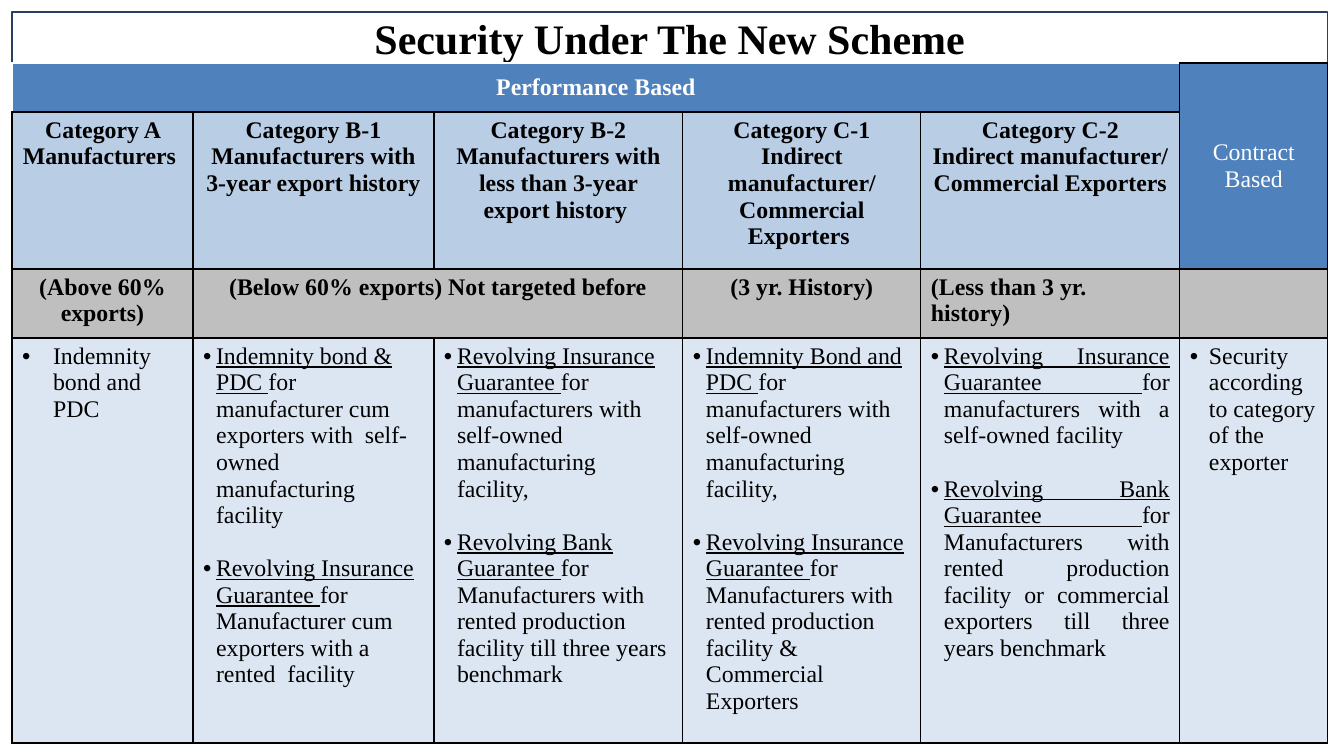
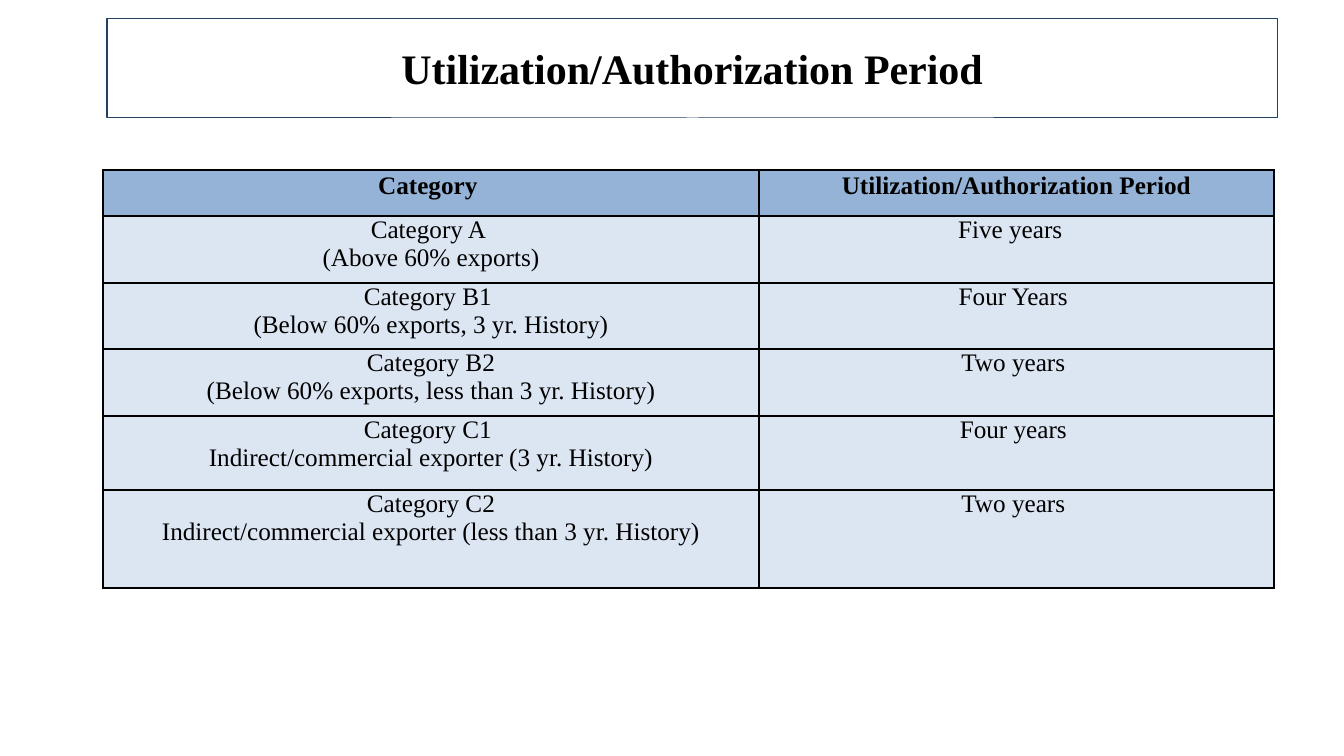
from dataclasses import dataclass
from typing import Optional

from lxml.etree import SubElement
from pptx import Presentation
from pptx.dml.color import RGBColor
from pptx.enum.text import MSO_ANCHOR, MSO_AUTO_SIZE, PP_ALIGN
from pptx.oxml.ns import qn
from pptx.util import Emu, Pt

FONT = "Times New Roman"
BLACK, WHITE, NAVY = "000000", "FFFFFF", "254061"
BLUE, MID_BLUE, SOFT_BLUE = "4F81BD", "95B3D7", "B9CDE5"
PALE_BLUE, GREY = "DCE6F2", "BFBFBF"
SIDES = ("L", "R", "T", "B")
CENTER, LEFT, JUSTIFY = PP_ALIGN.CENTER, PP_ALIGN.LEFT, PP_ALIGN.JUSTIFY


@dataclass(frozen=True)
class Box:
    x: int
    y: int
    w: int
    h: int


@dataclass(frozen=True)
class Band:
    row: int
    col: int
    text: str
    fill: str
    rows: int = 1
    cols: int = 1
    bold: bool = True
    color: str = BLACK
    align: PP_ALIGN = CENTER
    anchor: MSO_ANCHOR = MSO_ANCHOR.TOP


@dataclass(frozen=True)
class Security:
    items: tuple[tuple[str, str], ...]
    indent: int = 13
    align: PP_ALIGN = LEFT


@dataclass(frozen=True)
class Period:
    category: str
    years: str
    height: int


BANDS = (
    Band(0, 0, "Performance Based", BLUE, cols=5, color=WHITE, anchor=MSO_ANCHOR.MIDDLE),
    Band(0, 5, "Contract Based", BLUE, rows=2, bold=False, color=WHITE, anchor=MSO_ANCHOR.MIDDLE),
    Band(1, 0, "Category A Manufacturers ", SOFT_BLUE),
    Band(1, 1, "Category B-1 Manufacturers with 3-year export history", SOFT_BLUE),
    Band(1, 2, "Category B-2 Manufacturers with less than 3-year export history ", SOFT_BLUE),
    Band(1, 3, "Category C-1\nIndirect manufacturer/ Commercial Exporters ", SOFT_BLUE),
    Band(1, 4, "Category C-2\nIndirect manufacturer/ Commercial Exporters", SOFT_BLUE),
    Band(2, 0, "(Above 60% exports)", GREY),
    Band(2, 1, "(Below 60% exports) Not targeted before", GREY, cols=2),
    Band(2, 3, "(3 yr. History)", GREY),
    Band(2, 4, "(Less than 3 yr. history)", GREY, align=LEFT),
    Band(2, 5, "", GREY),
)

SECURITIES = (
    Security((("", "Indemnity bond and PDC"),), indent=31),
    Security((
        ("Indemnity bond & PDC ",
         "for manufacturer cum exporters with  self-owned manufacturing facility"),
        ("Revolving Insurance Guarantee ",
         "for Manufacturer cum exporters with a rented  facility"),
    )),
    Security((
        ("Revolving Insurance Guarantee ",
         "for manufacturers with self-owned manufacturing facility,"),
        ("Revolving Bank Guarantee ",
         "for Manufacturers with rented production facility till three years benchmark"),
    )),
    Security((
        ("Indemnity Bond and PDC ",
         "for manufacturers with self-owned manufacturing facility,"),
        ("Revolving Insurance Guarantee ",
         "for Manufacturers with rented production facility & Commercial Exporters"),
    )),
    Security((
        ("Revolving Insurance Guarantee ",
         "for manufacturers with a self-owned facility "),
        ("Revolving Bank Guarantee ",
         "for Manufacturers with rented production facility or commercial exporters "
         "till three years benchmark"),
    ), align=JUSTIFY),
    Security((("", "Security according to category of the exporter"),), indent=19),
)

PERIODS = (
    Period("Category ", "Utilization/Authorization Period", 46),
    Period("Category A \n(Above 60% exports)", "Five years  ", 67),
    Period("Category B1 \n(Below 60% exports, 3 yr. History)", "Four Years ", 66),
    Period("Category B2\n(Below 60% exports, less than 3 yr. History)", "Two years ", 67),
    Period("Category C1 \nIndirect/commercial exporter (3 yr. History)", "Four years ", 74),
    Period("Category C2\nIndirect/commercial exporter (less than 3 yr. History)", "Two years ", 98),
)


def px(n: int) -> Emu:
    return Emu(round(n * 914400 / 100.8))


def rgb(value: str) -> RGBColor:
    return RGBColor.from_string(value)


def add_text(tf, text: str, *, size: int, lead: str = "", bold: bool = False,
             color: str = BLACK, align: PP_ALIGN = CENTER, indent: int = 0,
             before: int = 0, spacing: Optional[float] = None) -> None:
    for line in text.split("\n"):
        p = tf.paragraphs[0]
        if p.runs:
            p = tf.add_paragraph()
        p.alignment = align
        p.line_spacing = spacing
        p.space_before = Pt(before)
        if indent:
            pPr = p._p.get_or_add_pPr()
            pPr.set("marL", str(px(indent)))
            pPr.set("indent", str(-px(indent)))
            SubElement(pPr, qn("a:buFont"), typeface="Arial")
            SubElement(pPr, qn("a:buChar"), char="•")
        for part, underline in ((lead, True), (line, False)):
            if part:
                r = p.add_run()
                r.text = part
                r.font.name = FONT
                r.font.size = Pt(size)
                r.font.bold = bold
                r.font.underline = underline
                r.font.color.rgb = rgb(color)


def add_titled_slide(prs, text: str, box: Box):
    s = prs.slides.add_slide(prs.slide_layouts[5])
    sp = s.shapes.title
    sp.left, sp.top, sp.width, sp.height = px(box.x), px(box.y), px(box.w), px(box.h)
    sp.line.color.rgb = rgb(NAVY)
    sp.line.width = Pt(0.75)
    tf = sp.text_frame
    tf.auto_size = MSO_AUTO_SIZE.NONE
    tf.vertical_anchor = MSO_ANCHOR.MIDDLE
    add_text(tf, text, size=30, bold=True)
    return s


def add_grid(s, x: int, y: int, widths: list[int], heights: list[int]):
    frame = s.shapes.add_table(len(heights), len(widths), px(x), px(y),
                               px(sum(widths)), px(sum(heights)))
    table = frame.table
    for column, width in zip(table.columns, widths):
        column.width = px(width)
    for row, height in zip(table.rows, heights):
        row.height = px(height)
    return table


def style_cell(cell, fill: str, white_sides: str = "") -> None:
    tcPr = cell._tc.get_or_add_tcPr()
    for side in SIDES:
        ln = SubElement(tcPr, qn(f"a:ln{side}"), w=str(Pt(1)))
        solid = SubElement(ln, qn("a:solidFill"))
        SubElement(solid, qn("a:srgbClr"), val=WHITE if side in white_sides else BLACK)
    cell.fill.solid()
    cell.fill.fore_color.rgb = rgb(fill)


def draw_security(prs) -> None:
    s = add_titled_slide(prs, "Security Under The New Scheme", Box(12, 12, 1316, 51))
    table = add_grid(s, 12, 63, [181, 241, 249, 238, 259, 148], [49, 157, 69, 405])
    for band in BANDS:
        white_sides = "LT" if band.row == band.col == 0 else ""
        for row in range(band.row, band.row + band.rows):
            for col in range(band.col, band.col + band.cols):
                style_cell(table.cell(row, col), band.fill, white_sides)
        cell = table.cell(band.row, band.col)
        if band.rows * band.cols > 1:
            cell.merge(table.cell(band.row + band.rows - 1, band.col + band.cols - 1))
        cell.vertical_anchor = band.anchor
        add_text(cell.text_frame, band.text, size=17, bold=band.bold,
                 color=band.color, align=band.align)
    for col, security in enumerate(SECURITIES):
        cell = table.cell(3, col)
        style_cell(cell, PALE_BLUE)
        for i, (lead, rest) in enumerate(security.items):
            add_text(cell.text_frame, rest, lead=lead, size=17, align=security.align,
                     indent=security.indent, before=19 if i else 0)


def draw_periods(prs) -> None:
    s = add_titled_slide(prs, "Utilization/Authorization Period", Box(107, 18, 1171, 100))
    table = add_grid(s, 103, 170, [656, 515], [period.height for period in PERIODS])
    for row, period in enumerate(PERIODS):
        header = row == 0
        for col, text in enumerate((period.category, period.years)):
            cell = table.cell(row, col)
            style_cell(cell, MID_BLUE if header else PALE_BLUE)
            cell.margin_left = cell.margin_right = px(7)
            cell.margin_top = cell.margin_bottom = 0
            add_text(cell.text_frame, text, size=18, bold=header,
                     spacing=1.07 if header else None)


def main() -> None:
    prs = Presentation()
    prs.slide_width, prs.slide_height = px(1344), px(756)
    draw_security(prs)
    draw_periods(prs)
    prs.save("out.pptx")


if __name__ == "__main__":
    main()
